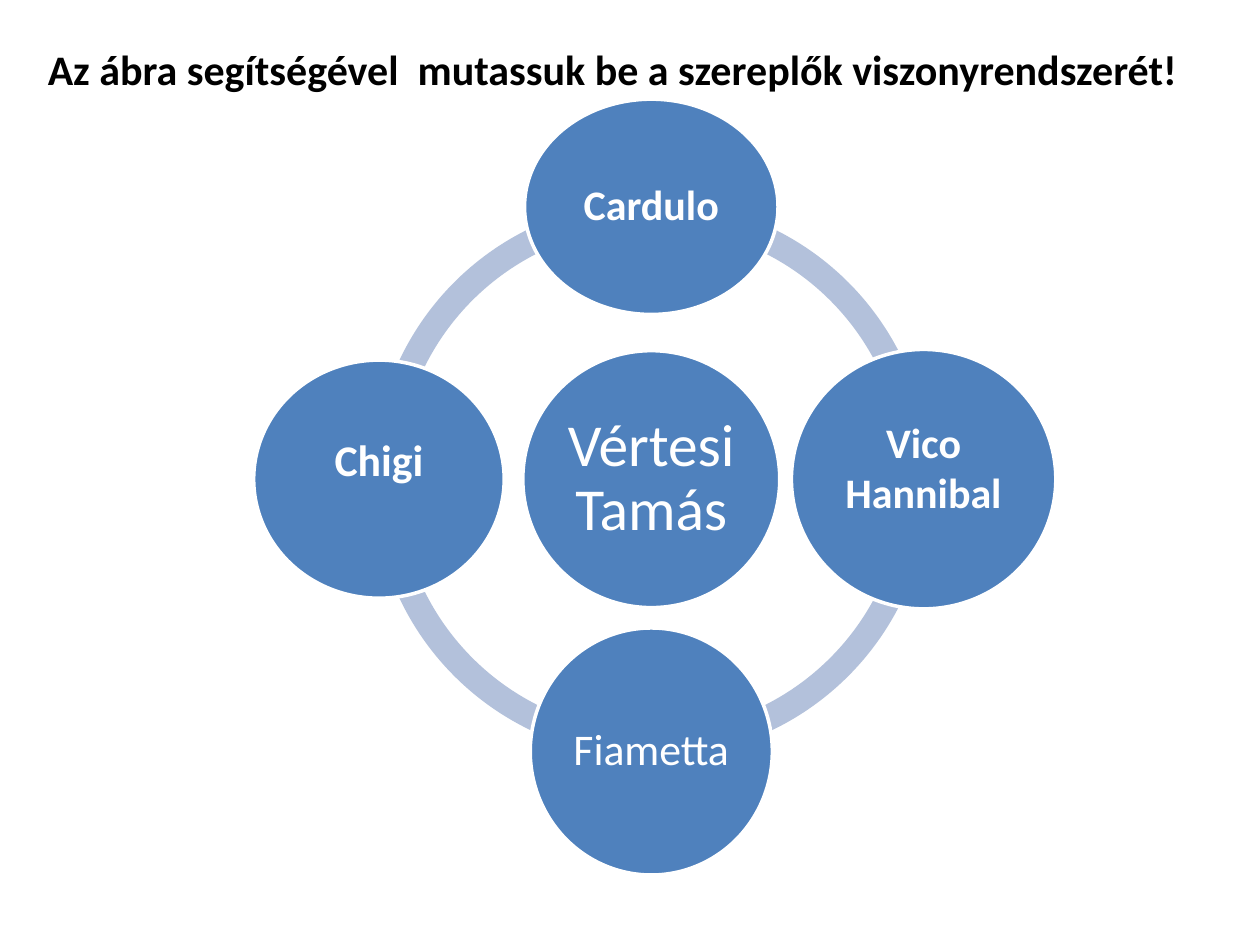
"""Builds a slide showing the web of relations around Vértesi Tamás."""
import pptx
import pptx.dml.color
import pptx.enum.shapes
import pptx.enum.text
import pptx.util

Cm = pptx.util.Cm
Pt = pptx.util.Pt
SHAPE = pptx.enum.shapes.MSO_SHAPE
ALIGN = pptx.enum.text.PP_ALIGN
ANCHOR = pptx.enum.text.MSO_ANCHOR
COLORS = {"circle": "4F81BD", "ring": "B3C1DB", "light": "FFFFFF", "dark": "000000"}


class RelationSlide:
    def __init__(self, deck, font="Calibri"):
        self.font = font
        self.slide = deck.slides.add_slide(deck.slide_layouts[5])

    def color(self, name):
        return pptx.dml.color.RGBColor.from_string(COLORS[name])

    def label(self, frame, text, size, color, align, bold):
        frame.word_wrap = True
        paragraph = frame.paragraphs[0]
        paragraph.text = text
        paragraph.alignment = align
        paragraph.font.name = self.font
        paragraph.font.size = Pt(size)
        paragraph.font.bold = bold
        paragraph.font.color.rgb = self.color(color)
        return paragraph

    def title(self, text, left, top, width, height):
        heading = self.slide.shapes.title
        heading.left, heading.top = Cm(left), Cm(top)
        heading.width, heading.height = Cm(width), Cm(height)
        frame = heading.text_frame
        frame.auto_size = pptx.enum.text.MSO_AUTO_SIZE.NONE
        frame.vertical_anchor = ANCHOR.MIDDLE
        self.label(frame, text, 24, "dark", ALIGN.LEFT, True)

    def centred(self, preset, x, y, width, height, fill):
        shape = self.slide.shapes.add_shape(
            preset, Cm(x - width / 2), Cm(y - height / 2), Cm(width), Cm(height))
        shape.shadow.inherit = False
        shape.fill.solid()
        shape.fill.fore_color.rgb = self.color(fill)
        return shape

    def arc(self, x, y, diameter, start, end):
        arc = self.centred(SHAPE.BLOCK_ARC, x, y, diameter, diameter, "ring")
        arc.line.fill.background()
        for index, value in enumerate((start * 0.6, end * 0.6, 0.046)):
            arc.adjustments[index] = value

    def character(self, name, x, y, width, height, size, bold, spacing=0.9, lift=0):
        circle = self.centred(SHAPE.OVAL, x, y, width, height, "circle")
        circle.line.color.rgb = self.color("light")
        circle.line.width = Pt(2)
        frame = circle.text_frame
        frame.margin_left = frame.margin_right = frame.margin_top = Cm(0.08)
        frame.margin_bottom = Cm(0.08 + 2 * lift)
        frame.vertical_anchor = ANCHOR.MIDDLE
        paragraph = self.label(frame, name, size, "light", ALIGN.CENTER, bold)
        paragraph.line_spacing = spacing


def main():
    deck = pptx.Presentation()
    deck.slide_width, deck.slide_height = Cm(25.4), Cm(19.05)
    relations = RelationSlide(deck)
    x, y, reach = 13.13, 9.66, 5.49

    for start in (180, 90, 0, 270):
        relations.arc(x, y, 11.23, start, (start + 90) % 360)

    relations.character("Vértesi Tamás", x, y, 5.18, 5.18, 34, False)
    relations.character("Cardulo", x, y - reach, 5.11, 4.34, 24, True)
    relations.character("Vico Hannibal", x + reach, y, 5.33, 5.23, 24, True, 1, 0.25)
    relations.character("Fiametta", x, y + reach, 4.88, 4.98, 25, False)
    relations.character("Chigi", x - reach, y, 5.05, 4.8, 25, True, 1, 0.4)

    relations.title("Az ábra segítségével  mutassuk be a szereplők viszonyrendszerét!",
                    0.71, 0.74, 24, 1.27)
    deck.save("out.pptx")


if __name__ == "__main__":
    main()
